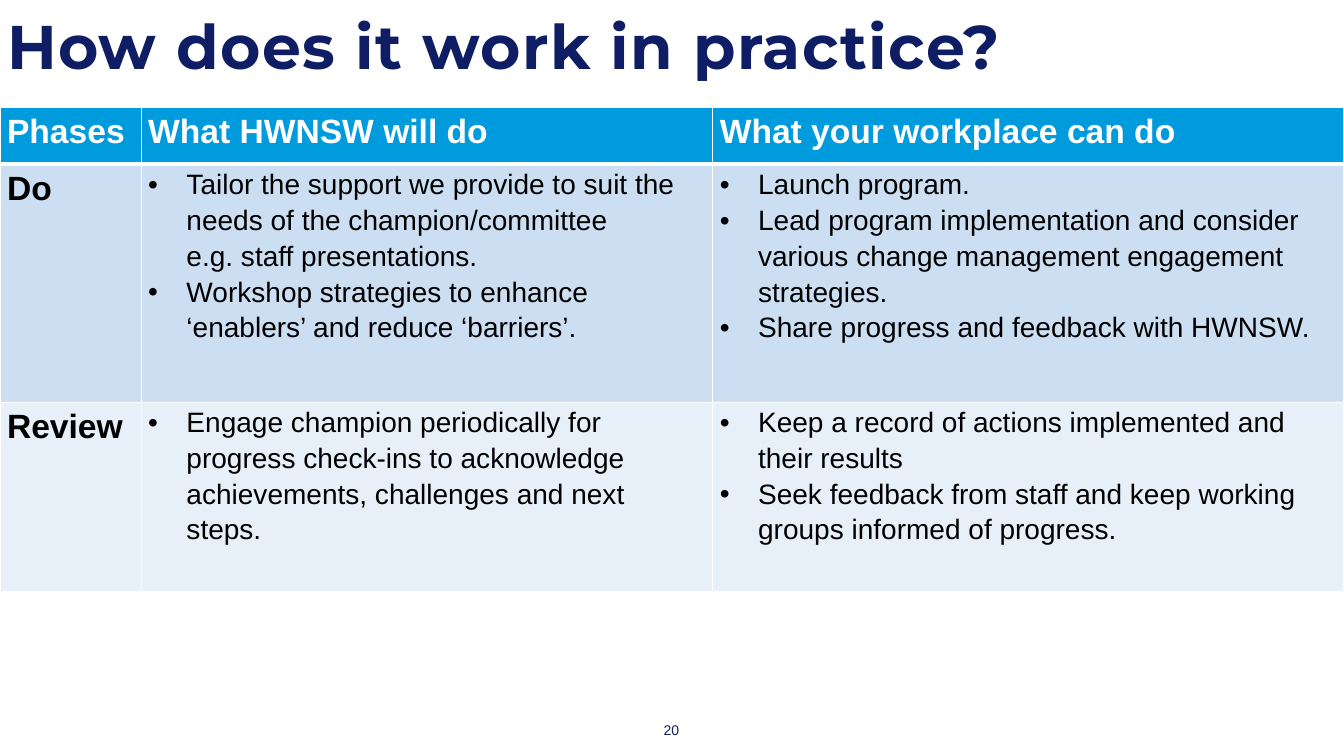
from lxml.etree import SubElement
from pptx import Presentation
from pptx.dml.color import RGBColor
from pptx.enum.text import MSO_ANCHOR, PP_ALIGN
from pptx.oxml.ns import qn
from pptx.util import Inches, Pt

NAVY, BLUE, WHITE, BLACK = "0F1E64", "009BDC", "FFFFFF", "000000"
FILLS = [BLUE, "CCDEF2", "E7EFF9"]
COLS = [1.4, 5.67, 6.26]
ROWS = [0.56, 2.36, 1.88]
HEADS = ["Phases", "What HWNSW will do", "What your workplace can do"]
PHASES = [
    ("Do",
     ["Tailor the support we provide to suit the needs of the "
      "champion/committee \ve.g. staff presentations.",
      "Workshop strategies to enhance ‘enablers’ and reduce ‘barriers’."],
     ["Launch program.",
      "Lead program implementation and consider various change management "
      "engagement strategies.",
      "Share progress and feedback with HWNSW."]),
    ("Review",
     ["Engage champion periodically for progress check-ins to acknowledge "
      "achievements, challenges and next steps."],
     ["Keep a record of actions implemented and their results",
      "Seek feedback from staff and keep working groups informed of progress."]),
]


def color(code):
    return RGBColor.from_string(code)


def style(para, code, **font):
    for run in para.runs:
        run.font.color.rgb = color(code)
        for name, value in font.items():
            setattr(run.font, name, value)


def add_text(slide, text, place, code, align=PP_ALIGN.LEFT, **font):
    box = slide.shapes.add_textbox(*map(Inches, place))
    frame = box.text_frame
    frame.word_wrap = True
    frame.vertical_anchor = MSO_ANCHOR.MIDDLE
    frame.margin_left = frame.margin_right = Inches(0.07)
    para = frame.paragraphs[0]
    para.text = text
    para.alignment = align
    style(para, code, **font)
    return para


def add_bullet(para):
    props = para._p.get_or_add_pPr()
    props.set("marL", str(Inches(0.38)))
    props.set("indent", str(-Inches(0.38)))
    SubElement(props, qn("a:buFont"), typeface="Arial")
    SubElement(props, qn("a:buChar"), char="•")


def add_edges(cell, row):
    """Draw white cell borders, thick between the header and the body."""
    props = cell._tc.get_or_add_tcPr()
    for side in "LRTB":
        thick = (row, side) in [(0, "B"), (1, "T")]
        line = SubElement(props, qn(f"a:ln{side}"), w=str(Pt(3 if thick else 1)))
        fill = SubElement(line, qn("a:solidFill"))
        SubElement(fill, qn("a:srgbClr"), val=WHITE)


def fill_cell(cell, row, content):
    """Write a bold label for a string, or bullets for a list."""
    add_edges(cell, row)
    cell.fill.solid()
    cell.fill.fore_color.rgb = color(FILLS[row])
    cell.margin_left = cell.margin_right = Inches(0.07)
    cell.margin_top = cell.margin_bottom = 0
    label = isinstance(content, str)
    frame = cell.text_frame
    for i, text in enumerate([content] if label else content):
        para = frame.add_paragraph() if i else frame.paragraphs[0]
        para.text = text
        para.line_spacing = 1.15
        if not label:
            add_bullet(para)
        style(para, BLACK if row else WHITE, name="Arial",
              size=Pt(24 if label else 20), bold=label)


def add_grid(slide):
    place = map(Inches, (0, 1.07, sum(COLS), sum(ROWS)))
    table = slide.shapes.add_table(len(ROWS), len(COLS), *place).table
    for col, width in zip(table.columns, COLS):
        col.width = Inches(width)
    for row, height in zip(table.rows, ROWS):
        row.height = Inches(height)
    for r, line in enumerate([HEADS, *PHASES]):
        for c, content in enumerate(line):
            fill_cell(table.cell(r, c), r, content)


def main():
    deck = Presentation()
    deck.slide_width, deck.slide_height = Inches(13.33), Inches(7.5)
    slide = deck.slides.add_slide(deck.slide_layouts[6])
    add_text(slide, "20", (6.23, 7.09, 0.86, 0.3), NAVY, PP_ALIGN.CENTER,
             name="Arial", size=Pt(10))
    add_grid(slide)
    title = add_text(slide, "How does it work in practice?",
                     (0, 0.13, 11.56, 0.77), NAVY,
                     name="Montserrat", size=Pt(44), bold=True)
    title.line_spacing = 0.8
    title.runs[0].font._element.set("spc", "100")
    deck.save("out.pptx")


if __name__ == "__main__":
    main()
